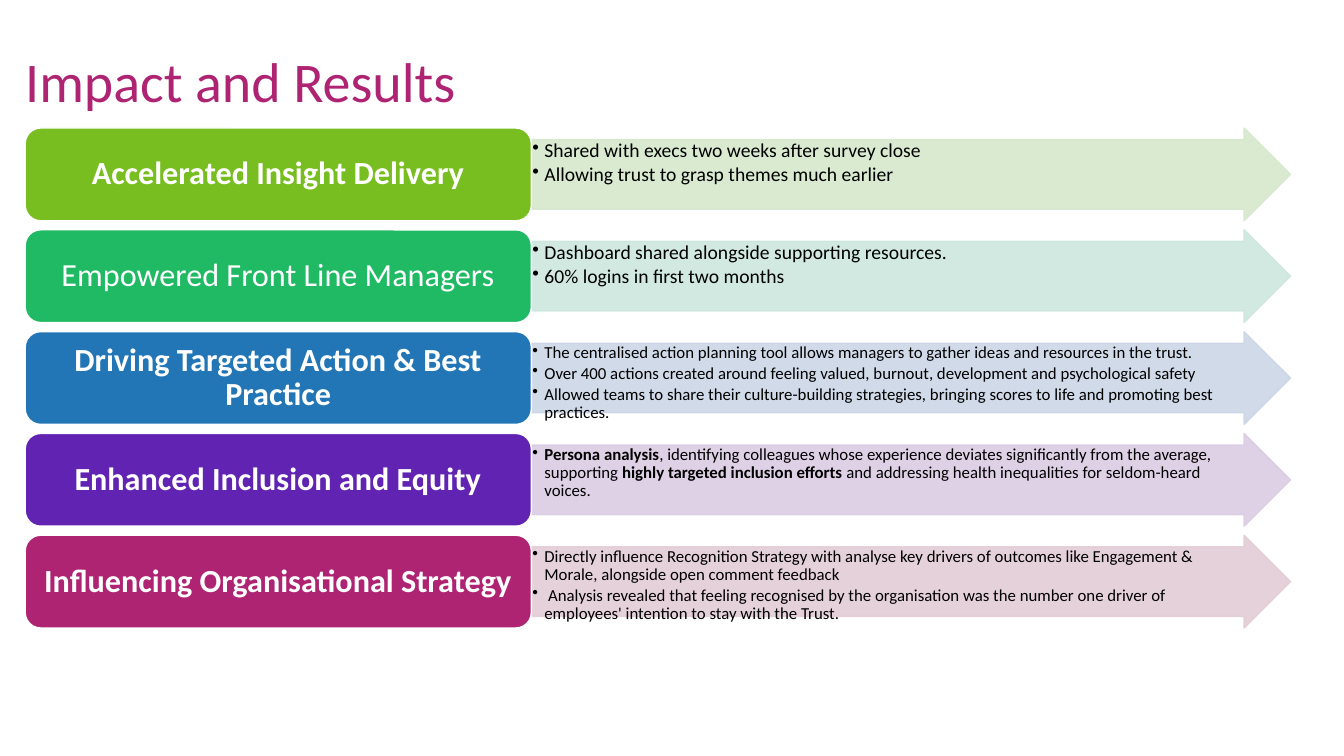
from lxml import etree
from pptx import Presentation
from pptx.dml.color import RGBColor
from pptx.enum.shapes import MSO_SHAPE as SHAPE
from pptx.enum.text import MSO_ANCHOR as ANCHOR, PP_ALIGN as ALIGN
from pptx.oxml.ns import qn
from pptx.util import Inches, Pt

FONT = "Calibri"
COLORS = {
    "title": "AE2473", "white": "FFFFFF", "black": "000000",
    "lime": "78BE20", "lime_tint": "D6E8CD",
    "green": "21BA64", "green_tint": "CDE7DD",
    "blue": "2276B6", "blue_tint": "CDD6E6",
    "purple": "6123B2", "purple_tint": "DBCDE4",
    "magenta": "AE2473", "magenta_tint": "E3CDD5",
}
TITLE = "Impact and Results"

# Each row: label, bold label, colour, bullet size, bullets as lists of (text, bold)
ROWS = [
    ("Accelerated Insight Delivery", True, "lime", 14, [
        [("Shared with execs two weeks after survey close", False)],
        [("Allowing trust to grasp themes much earlier", False)],
    ]),
    ("Empowered Front Line Managers", False, "green", 14, [
        [("Dashboard shared alongside supporting resources.", False)],
        [("60% logins in first two months", False)],
    ]),
    ("Driving Targeted Action & Best Practice", True, "blue", 12, [
        [("The centralised action planning tool allows managers to gather ideas "
          "and resources in the trust.", False)],
        [("Over 400 actions created around feeling valued, burnout, development "
          "and psychological safety", False)],
        [("Allowed teams to share their culture-building strategies, bringing "
          "scores to life and promoting best practices.", False)],
    ]),
    ("Enhanced Inclusion and Equity", True, "purple", 12, [
        [("Persona analysis", True),
         (", identifying colleagues whose experience deviates significantly from "
          "the average, supporting ", False),
         ("highly targeted inclusion efforts", True),
         (" and addressing health inequalities for seldom-heard voices.", False)],
    ]),
    ("Influencing Organisational Strategy", True, "magenta", 12, [
        [("Directly influence Recognition Strategy with analyse key drivers of "
          "outcomes like Engagement & Morale, alongside open comment feedback", False)],
        [(" Analysis revealed that feeling recognised by the organisation was the "
          "number one driver of employees' intention to stay with the Trust.", False)],
    ]),
]

LEFT, TOP, PITCH, HEIGHT = 0.25, 1.27, 1.01, 0.92
LABEL_W, ARROW_W = 5.02, 7.53


def rgb(name):
    return RGBColor.from_string(COLORS[name])


def style(font, size, color, bold=False):
    font.name, font.size, font.bold = FONT, Pt(size), bold
    font.color.rgb = rgb(color)


def set_frame(tf, anchor, left, top, right, bottom):
    tf.word_wrap = True
    tf.vertical_anchor = anchor
    tf.margin_left, tf.margin_top = Inches(left), Inches(top)
    tf.margin_right, tf.margin_bottom = Inches(right), Inches(bottom)


def add_block(slide, kind, x, y, w, fill, line):
    sp = slide.shapes.add_shape(kind, Inches(x), Inches(y), Inches(w), Inches(HEIGHT))
    sp.shadow.inherit = False
    sp.fill.solid()
    sp.fill.fore_color.rgb = rgb(fill)
    sp.line.color.rgb = rgb(line)
    sp.line.width = Pt(1)
    return sp


def add_arrow(slide, y, tint, size, bullets):
    sp = add_block(slide, SHAPE.RIGHT_ARROW, LEFT + LABEL_W, y, ARROW_W, tint, tint)
    sp.adjustments[0], sp.adjustments[1] = 0.75, 0.5
    # 90 % opacity for fill and outline
    for color in sp._element.spPr.iter(qn("a:srgbClr")):
        etree.SubElement(color, qn("a:alpha"), val="90000")
    tf = sp.text_frame
    set_frame(tf, ANCHOR.TOP, 0.01, 0.01, 0.25, 0.01)
    for i, parts in enumerate(bullets):
        p = tf.paragraphs[0] if i == 0 else tf.add_paragraph()
        p.alignment, p.line_spacing = ALIGN.LEFT, 0.9
        p.space_after = Pt(size * 0.15)
        pPr = p._p.get_or_add_pPr()
        pPr.set("marL", str(Inches(0.12)))
        pPr.set("indent", str(Inches(-0.12)))
        etree.SubElement(pPr, qn("a:buChar"), char="•")
        for text, bold in parts:
            r = p.add_run()
            r.text = text
            style(r.font, size, "black", bold)


def add_label(slide, y, color, text, bold):
    sp = add_block(slide, SHAPE.ROUNDED_RECTANGLE, LEFT, y, LABEL_W, color, "white")
    tf = sp.text_frame
    set_frame(tf, ANCHOR.MIDDLE, 0.1, 0.05, 0.1, 0.05)
    tf.text = text
    p = tf.paragraphs[0]
    p.alignment, p.line_spacing = ALIGN.CENTER, 0.9
    style(p.runs[0].font, 23, "white", bold)


def main():
    prs = Presentation()
    prs.slide_width, prs.slide_height = Inches(13.33), Inches(7.5)
    slide = prs.slides.add_slide(prs.slide_layouts[6])

    # Title
    box = slide.shapes.add_textbox(Inches(LEFT), Inches(0.22), Inches(9.92), Inches(0.91))
    tf = box.text_frame
    set_frame(tf, ANCHOR.BOTTOM, 0, 0, 0, 0)
    tf.text = TITLE
    p = tf.paragraphs[0]
    p.line_spacing = Pt(44)
    style(p.runs[0].font, 40, "title")

    # Label and arrow rows
    for i, (label, bold, color, size, bullets) in enumerate(ROWS):
        y = TOP + i * PITCH
        add_arrow(slide, y, color + "_tint", size, bullets)
        add_label(slide, y, color, label, bold)

    prs.save("out.pptx")


if __name__ == "__main__":
    main()
